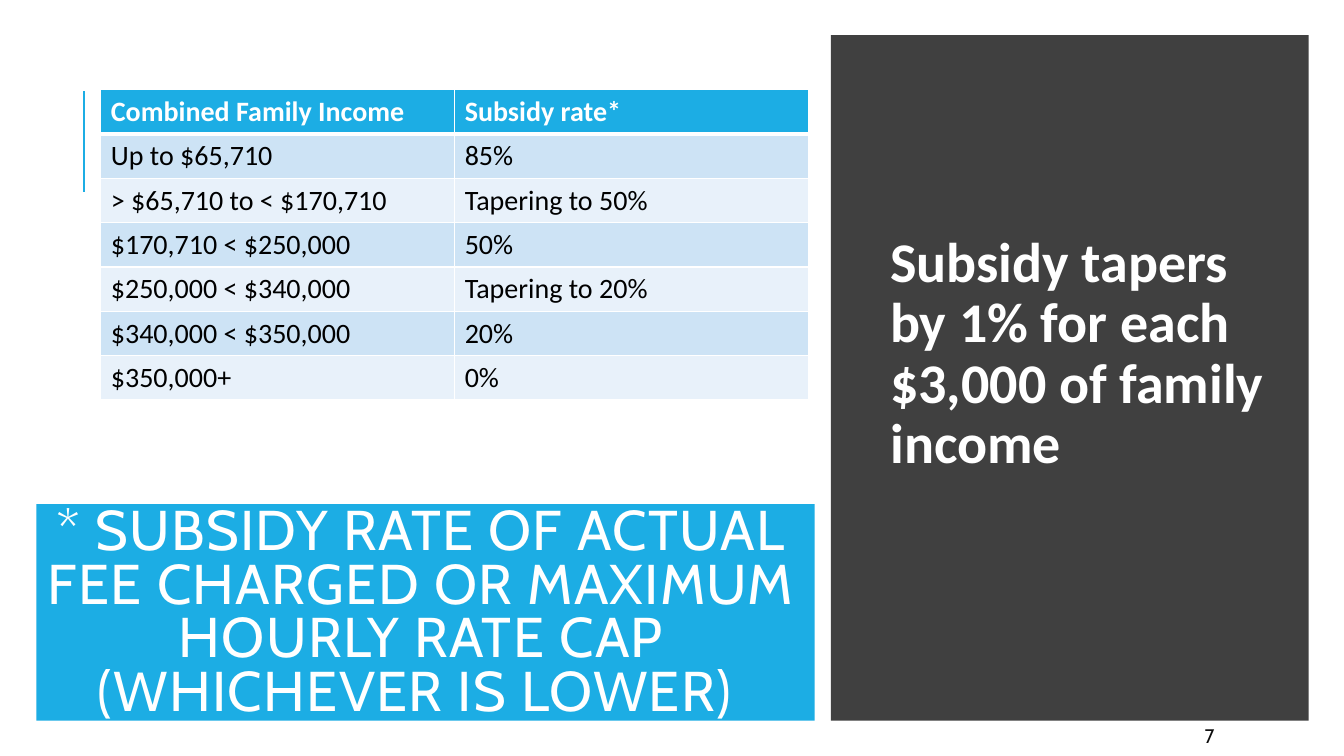
from dataclasses import dataclass

from lxml import etree
from pptx import Presentation
from pptx import util as u
from pptx.dml.color import RGBColor
from pptx.enum import shapes, text
from pptx.oxml import ns

HUES = {
    "blue": "1CADE4",
    "dark": "404040",
    "band": "CDE3F5",
    "pale": "E8F1FA",
    "white": "FFFFFF",
    "black": "000000",
    "ink": "0D0D0D",
}

RATES = [
    ("Combined Family Income", "Subsidy rate*"),
    ("Up to $65,710", "85%"),
    ("> $65,710 to < $170,710", "Tapering to 50%"),
    ("$170,710 < $250,000", "50%"),
    ("$250,000 < $340,000", "Tapering to 20%"),
    ("$340,000 < $350,000", "20%"),
    ("$350,000+", "0%"),
]


@dataclass
class Box:
    left: float
    top: float
    width: float
    height: float

    def place(self) -> list:
        return [u.Inches(n) for n in (self.left, self.top, self.width, self.height)]


@dataclass
class Panel:
    box: Box
    hue: str


@dataclass
class Style:
    font: str
    size: int
    hue: str
    bold: bool = False


PANELS = [
    Panel(Box(0.36, 5, 7.72, 2.15), "blue"),
    Panel(Box(8.24, 0.35, 4.74, 6.8), "dark"),
]


def color(hue: str) -> RGBColor:
    return RGBColor.from_string(HUES[hue])


def add_run(para, words: str, style: Style):
    run = para.add_run()
    run.text = words
    font = run.font
    font.name, font.size, font.bold = style.font, u.Pt(style.size), style.bold
    font.color.rgb = color(style.hue)
    return run


def add_panel(slide, panel: Panel) -> None:
    rect = slide.shapes.add_shape(shapes.MSO_SHAPE.RECTANGLE, *panel.box.place())
    rect.shadow.inherit = False
    rect.fill.solid()
    rect.fill.fore_color.rgb = color(panel.hue)
    rect.line.fill.background()


def add_rule(slide) -> None:
    x = u.Inches(0.83)
    rule = slide.shapes.add_connector(
        shapes.MSO_CONNECTOR.STRAIGHT, x, u.Inches(1.9), x, u.Inches(0.9))
    rule.line.color.rgb = color("blue")
    rule.line.width = u.Pt(1.5)
    etree.SubElement(rule.element.spPr, ns.qn("a:effectLst"))


def add_text(slide, box: Box, words: str, style: Style, inset: float = 0.1):
    frame = slide.shapes.add_textbox(*box.place()).text_frame
    frame.word_wrap = True
    frame.vertical_anchor = text.MSO_ANCHOR.MIDDLE
    frame.margin_left = frame.margin_right = u.Inches(inset)
    para = frame.paragraphs[0]
    add_run(para, words, style)
    return para


def set_title(slide) -> None:
    title = slide.shapes.title
    title.left, title.top, title.width, title.height = Box(0.35, 5.21, 7.67, 1.78).place()
    frame = title.text_frame
    frame.word_wrap = True
    frame.auto_size = text.MSO_AUTO_SIZE.NONE
    frame.vertical_anchor = text.MSO_ANCHOR.MIDDLE
    para = frame.paragraphs[0]
    para.alignment = text.PP_ALIGN.CENTER
    para.line_spacing = 0.8
    words = "* SUBSIDY RATE OF ACTUAL FEE CHARGED OR MAXIMUM HOURLY RATE CAP (WHICHEVER IS LOWER) "
    run = add_run(para, words, Style("Cabin", 40, "white"))
    run.font.element.set("spc", "100") if hasattr(run.font, "element") else \
        para.runs[0].font._rPr.set("spc", "100")
    # Bring the title in front of its panel
    slide.shapes.element.append(title.element)


def set_edges(cell, row: int) -> None:
    props = cell._tc.get_or_add_tcPr()
    wide = {"lnT": 3 if row == 1 else 1, "lnB": 3 if row == 0 else 1}
    for spot, side in enumerate(("lnL", "lnR", "lnT", "lnB")):
        edge = etree.Element(ns.qn("a:" + side), w=str(u.Pt(wide.get(side, 1))))
        fill = etree.SubElement(edge, ns.qn("a:solidFill"))
        etree.SubElement(fill, ns.qn("a:srgbClr"), val=HUES["white"])
        props.insert(spot, edge)


def add_rates(slide) -> None:
    high = 0.44
    box = Box(1, 0.89, 7.02, high * len(RATES))
    table = slide.shapes.add_table(len(RATES), 2, *box.place()).table
    for row, words in enumerate(RATES):
        table.rows[row].height = u.Inches(high)
        head = row == 0
        hue = "blue" if head else ("pale", "band")[row % 2]
        style = Style("Calibri", 20, "white" if head else "black", head)
        for col, word in enumerate(words):
            cell = table.cell(row, col)
            cell.fill.solid()
            cell.fill.fore_color.rgb = color(hue)
            add_run(cell.text_frame.paragraphs[0], word, style)
            set_edges(cell, row)


def main() -> None:
    deck = Presentation()
    deck.slide_width, deck.slide_height = u.Inches(13.33), u.Inches(7.5)
    slide = deck.slides.add_slide(deck.slide_layouts[5])

    # Accent line, panels and footnote title
    add_rule(slide)
    for panel in PANELS:
        add_panel(slide, panel)
    set_title(slide)

    # Side message and page number
    note = add_text(slide, Box(8.78, 1.55, 3.98, 3.94),
                    "Subsidy tapers by 1% for each $3,000 of family income",
                    Style("Calibri", 40, "white", True), 0.05)
    note.line_spacing = 0.9
    add_text(slide, Box(11.85, 7.15, 1.06, 0.3), "7", Style("Cabin", 14, "ink"))

    # Subsidy table
    add_rates(slide)
    deck.save("out.pptx")


if __name__ == "__main__":
    main()
